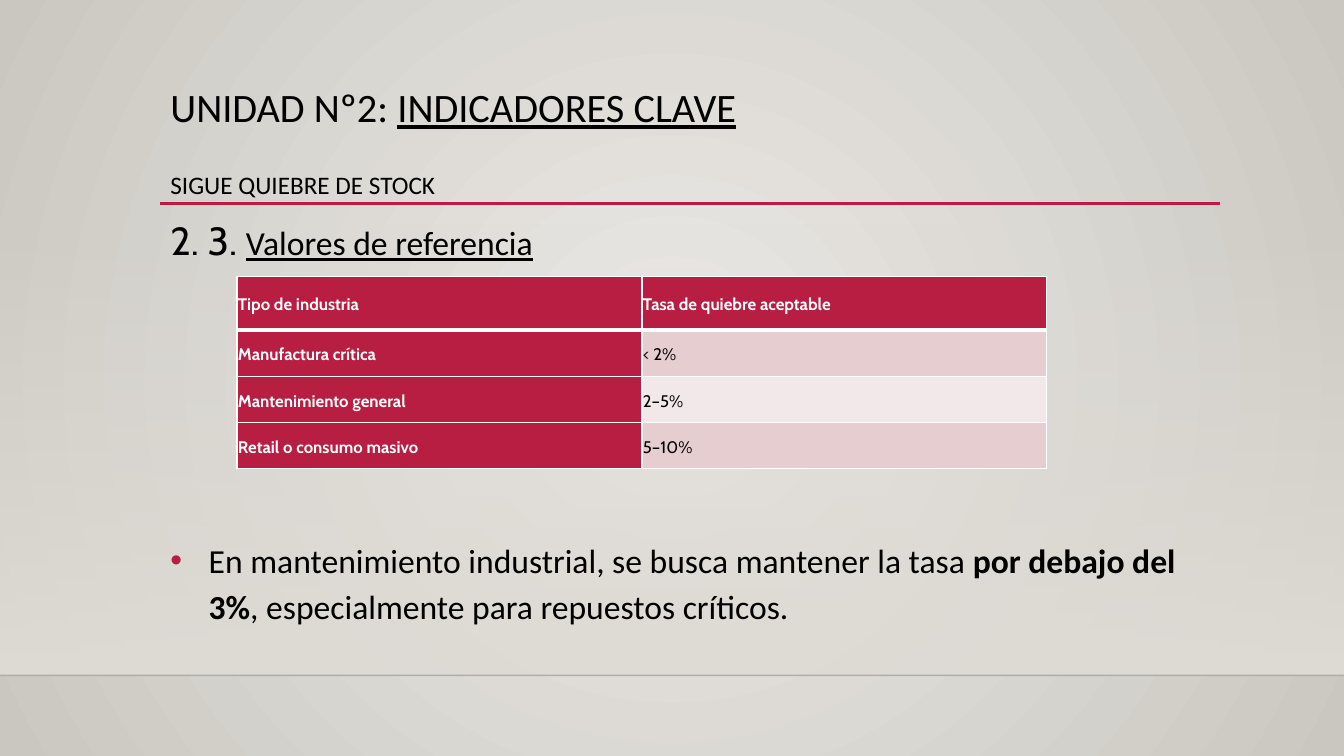
from dataclasses import dataclass

from lxml.etree import SubElement
from pptx import Presentation
from pptx.dml.color import RGBColor
from pptx.enum.shapes import MSO_CONNECTOR, MSO_SHAPE
from pptx.enum.text import MSO_ANCHOR, MSO_AUTO_SIZE, PP_ALIGN
from pptx.oxml import parse_xml
from pptx.oxml.ns import nsdecls, qn
from pptx.util import Inches, Pt


@dataclass(frozen=True)
class Theme:
    accent: str = "B71E42"
    ink: str = "000000"
    white: str = "FFFFFF"
    wall_center: str = "ECEAE7"
    wall_edge: str = "CAC7C1"
    floor: str = "DFDBD5"
    bands: tuple = ("E6CDCF", "F3E8E9")
    text_font: str = "Calibri"
    table_font: str = "Cabin"
    title_size: float = 28.8
    subtitle_size: float = 18
    number_size: float = 28
    body_size: float = 24
    table_size: float = 12


THEME = Theme()
ROWS = [
    ("Tipo de industria", "Tasa de quiebre aceptable"),
    ("Manufactura crítica", "< 2%"),
    ("Mantenimiento general", "2–5%"),
    ("Retail o consumo masivo", "5–10%"),
]
HEADER_SHARE = 0.28


@dataclass(frozen=True)
class Box:
    left: int
    top: int
    width: int
    height: int

    def inner(self, left, top, width, height):
        """Return an inner box given in percent of this one."""
        return Box(
            self.left + int(self.width * left / 100),
            self.top + int(self.height * top / 100),
            int(self.width * width / 100),
            int(self.height * height / 100),
        )

    @property
    def frame(self):
        return self.left, self.top, self.width, self.height


def add_run(paragraph, text, size, color=THEME.ink, font=THEME.text_font,
            bold=False, underline=False):
    run = paragraph.add_run()
    run.text = text
    run.font.size = Pt(size)
    run.font.name = font
    run.font.bold = bold
    run.font.underline = underline
    run.font.color.rgb = RGBColor.from_string(color)


def set_spacing(paragraph, line, before=0, after=0):
    paragraph.alignment = PP_ALIGN.LEFT
    paragraph.line_spacing = line
    paragraph.space_before = Pt(before)
    paragraph.space_after = Pt(after)


def set_bullet(paragraph, indent, character=None):
    """Set a hanging indent in inches, with a bullet or none."""
    properties = paragraph._p.get_or_add_pPr()
    properties.set("marL", str(Inches(indent)))
    properties.set("indent", str(-Inches(indent)))
    if character is None:
        SubElement(properties, qn("a:buNone"))
        return
    color = SubElement(properties, qn("a:buClr"))
    SubElement(color, qn("a:srgbClr"), val=THEME.accent)
    SubElement(properties, qn("a:buFont"), typeface="Arial")
    SubElement(properties, qn("a:buChar"), char=character)


def place_text(placeholder, box):
    """Bring a placeholder to the front of its box and return its frame."""
    placeholder.left, placeholder.top, placeholder.width, placeholder.height = box.frame
    placeholder.element.getparent().append(placeholder.element)
    frame = placeholder.text_frame
    frame.word_wrap = True
    frame.auto_size = MSO_AUTO_SIZE.NONE
    frame.vertical_anchor = MSO_ANCHOR.TOP
    return frame


def add_rule(slide, box, color, width, opacity=100):
    """Draw a line along the top edge of the box."""
    line = slide.shapes.add_connector(
        MSO_CONNECTOR.STRAIGHT, box.left, box.top, box.left + box.width, box.top)
    line.line.color.rgb = RGBColor.from_string(color)
    line.line.width = Pt(width)
    SubElement(line._element.spPr, qn("a:effectLst"))
    if opacity < 100:
        solid = line._element.spPr.find(".//" + qn("a:srgbClr"))
        SubElement(solid, qn("a:alpha"), val=str(opacity * 1000))


def add_backdrop(slide, box):
    background = parse_xml(
        f'<p:bg {nsdecls("p", "a")}><p:bgPr><a:gradFill rotWithShape="1"><a:gsLst>'
        f'<a:gs pos="0"><a:srgbClr val="{THEME.wall_center}"/></a:gs>'
        f'<a:gs pos="100000"><a:srgbClr val="{THEME.wall_edge}"/></a:gs></a:gsLst>'
        '<a:path path="circle"><a:fillToRect l="50000" t="50000" r="50000" b="50000"/>'
        '</a:path></a:gradFill><a:effectLst/></p:bgPr></p:bg>')
    slide.element.cSld.insert(0, background)

    wall = slide.shapes.add_shape(MSO_SHAPE.RECTANGLE, *box.inner(0, 29.47, 100, 59.87).frame)
    wall.shadow.inherit = False
    wall.line.fill.background()
    wall.fill.gradient()
    wall.fill.gradient_angle = 270
    for stop in wall.fill.gradient_stops:
        stop.color.rgb = RGBColor.from_string(THEME.floor)
    clear = wall._element.spPr.find(".//" + qn("a:srgbClr"))
    SubElement(clear, qn("a:alpha"), val="0")
    add_rule(slide, box.inner(0, 89.33, 100, 0), THEME.ink, 1, opacity=20)


def add_title(slide, box):
    frame = place_text(slide.shapes.title, box)
    heading = frame.paragraphs[0]
    set_spacing(heading, 0.9)
    add_run(heading, "UNIDAD Nº2: ", THEME.title_size)
    add_run(heading, "INDICADORES CLAVE", THEME.title_size, underline=True)
    subtitle = frame.add_paragraph()
    set_spacing(subtitle, 0.9, before=30)
    add_run(subtitle, "SIGUE QUIEBRE DE STOCK", THEME.subtitle_size)


def add_body(slide, box):
    frame = place_text(slide.placeholders[1], box)
    heading = frame.paragraphs[0]
    set_bullet(heading, 0.25)
    set_spacing(heading, 1.15, after=8)
    add_run(heading, "2. 3. ", THEME.number_size, font=THEME.table_font)
    add_run(heading, "Valores de referencia", THEME.body_size, underline=True)
    advice = frame.add_paragraph()
    set_bullet(advice, 0.38, "•")
    set_spacing(advice, 1.15, before=185, after=8)
    add_run(advice, "En mantenimiento industrial, se busca mantener la tasa ", THEME.body_size)
    add_run(advice, "por debajo del 3%", THEME.body_size, bold=True)
    add_run(advice, ", especialmente para repuestos críticos.", THEME.body_size)
    add_reference_table(slide, box.inner(7.24, 15.24, 76.5, 41))


def add_borders(cell, widths):
    """Draw white borders, with widths in points by side."""
    properties = cell._tc.get_or_add_tcPr()
    for side, width in widths.items():
        line = SubElement(properties, qn(f"a:ln{side}"), w=str(Pt(width)))
        fill = SubElement(line, qn("a:solidFill"))
        SubElement(fill, qn("a:srgbClr"), val=THEME.white)


def add_reference_table(slide, box):
    table = slide.shapes.add_table(len(ROWS), len(ROWS[0]), *box.frame).table
    header_height = int(box.height * HEADER_SHARE)
    row_height = (box.height - header_height) // (len(ROWS) - 1)
    for row_index, values in enumerate(ROWS):
        table.rows[row_index].height = row_height if row_index else header_height
        for column_index, value in enumerate(values):
            cell = table.cell(row_index, column_index)
            is_head = row_index == 0 or column_index == 0
            add_borders(cell, {"L": 1, "R": 1, "T": 3 if row_index == 1 else 1,
                               "B": 3 if row_index == 0 else 1})
            cell.fill.solid()
            cell.fill.fore_color.rgb = RGBColor.from_string(
                THEME.accent if is_head else THEME.bands[(row_index - 1) % 2])
            cell.vertical_anchor = MSO_ANCHOR.MIDDLE
            cell.margin_left = cell.margin_right = Inches(0.01)
            cell.margin_top = cell.margin_bottom = Inches(0.01)
            paragraph = cell.text_frame.paragraphs[0]
            set_spacing(paragraph, 1.15, after=8)
            add_run(paragraph, value, THEME.table_size, THEME.white if is_head else THEME.ink,
                    THEME.table_font, bold=is_head)


def main():
    presentation = Presentation()
    presentation.slide_width = Inches(13.33)
    presentation.slide_height = Inches(7.5)
    slide = presentation.slides.add_slide(presentation.slide_layouts[1])
    page = Box(0, 0, presentation.slide_width, presentation.slide_height)
    add_backdrop(slide, page)
    add_rule(slide, page.inner(11.93, 26.93, 78.84, 0), THEME.accent, 2.5)
    add_title(slide, page.inner(11.93, 10.93, 78.77, 16.13))
    add_body(slide, page.inner(11.93, 27.07, 78.77, 62.13))
    presentation.save("out.pptx")


if __name__ == "__main__":
    main()
